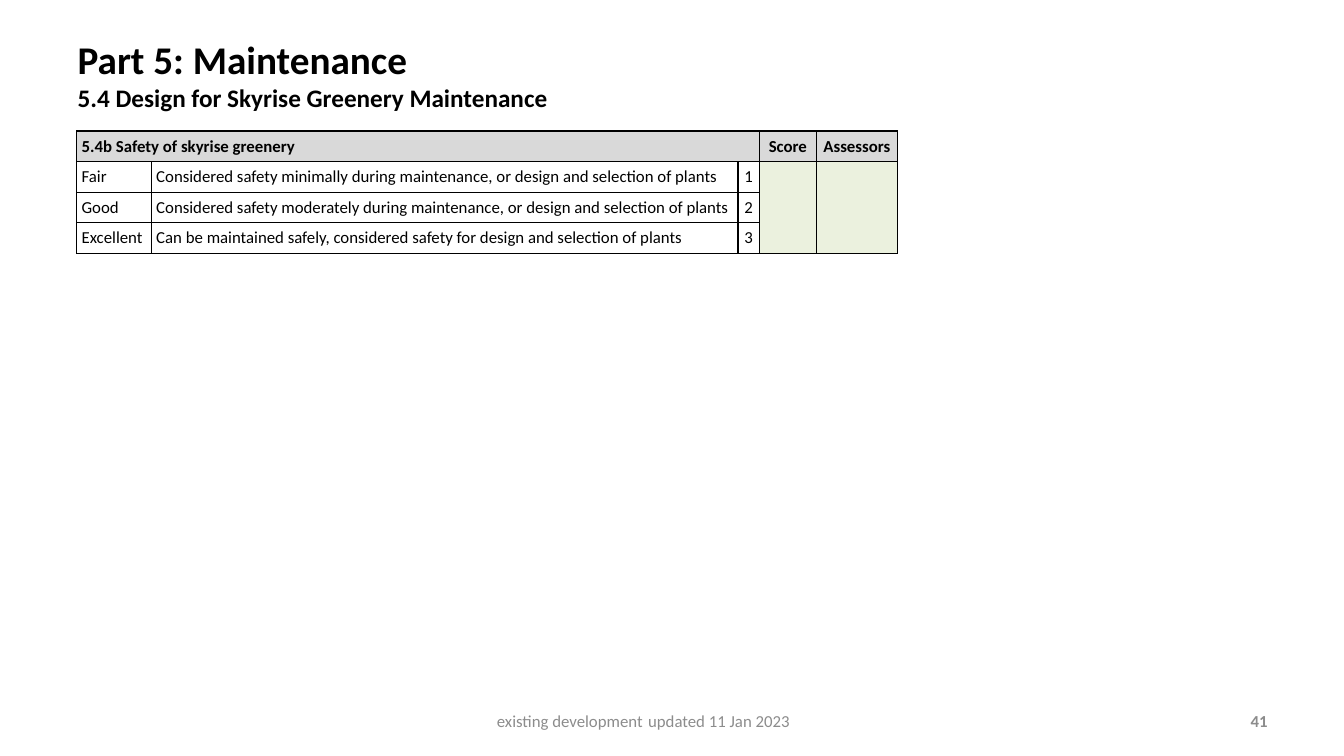
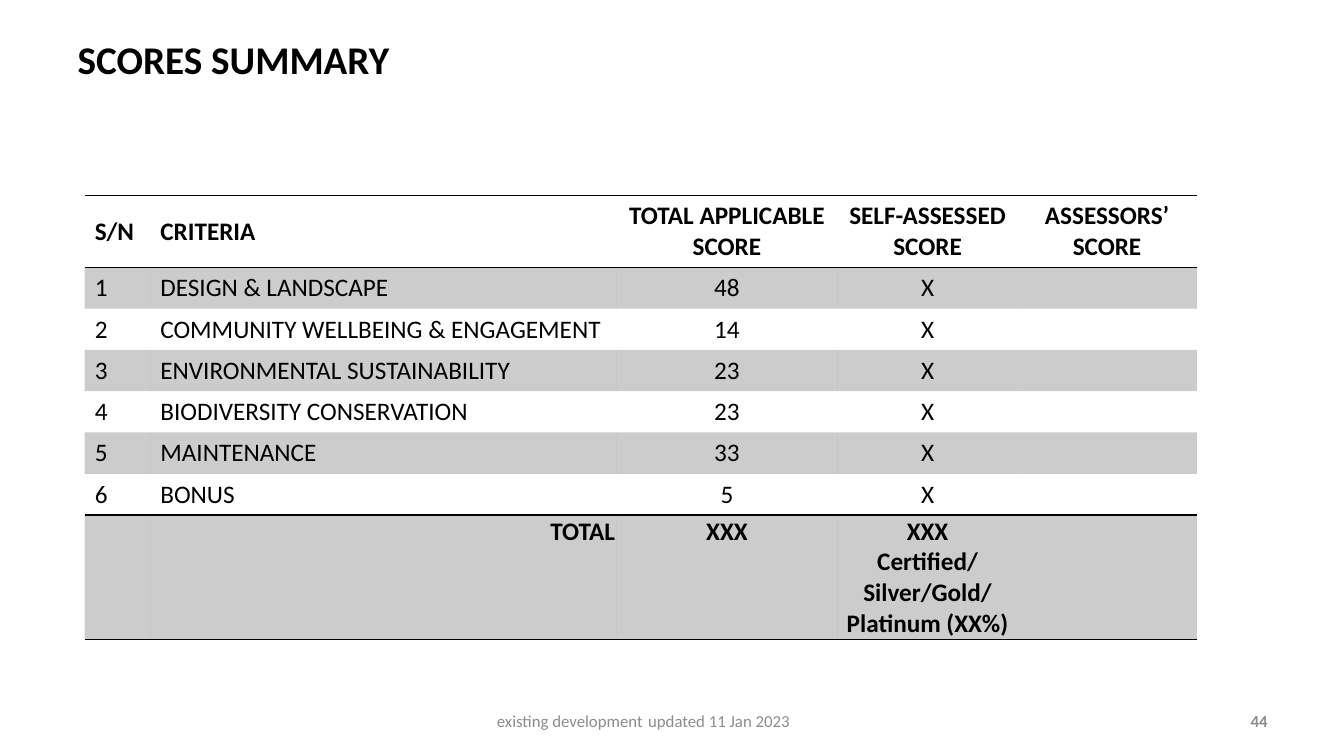
from dataclasses import dataclass
from typing import Any, NamedTuple

from lxml.etree import SubElement
from pptx import Presentation
from pptx.dml.color import RGBColor
from pptx.enum.text import MSO_ANCHOR as Anchor, MSO_AUTO_SIZE as AutoSize, PP_ALIGN as Align
from pptx.oxml.ns import qn
from pptx.util import Pt

EMU_PER_PX = 9144
TITLE_ONLY_LAYOUT = 5
NO_STYLE_NO_GRID = "{2D5ABB26-0587-4C30-8999-92F81FD0307C}"
ALL_SIDES = "LRTB"


@dataclass(frozen=True)
class Theme:
    font: str = "Calibri"
    ink: str = "000000"
    muted: str = "8C8C8C"
    header: str = "D9D9D9"
    entry: str = "EBF1DE"
    band_alpha: int = 20
    title_size: int = 28
    subtitle_size: int = 18
    summary_size: int = 18
    small_size: int = 12
    rule_width: int = 1


THEME = Theme()


class Box(NamedTuple):
    left: int
    top: int
    width: int
    height: int


class Insets(NamedTuple):
    left: int
    top: int
    right: int
    bottom: int


TITLE_BOX = Box(67, 30, 1036, 99)
FOOTER_BOX = Box(456, 695, 422, 40)
NUMBER_BOX = Box(956, 695, 311, 40)
FOOTER_INDENT = 27
FOOTER_TAB = 229


@dataclass(frozen=True)
class RowStyle:
    size: int
    bold: bool = False
    anchor: Any = Anchor.MIDDLE
    insets: Insets = Insets(10, 5, 10, 5)
    sides: str = ""
    fill: str | None = None
    alpha: int = 100


@dataclass(frozen=True)
class Row:
    height: int
    texts: tuple[str, ...]
    style: RowStyle
    aligns: tuple[Any, ...]


def px(length: int) -> int:
    return length * EMU_PER_PX


def set_all(target: Any, values: dict[str, Any]) -> None:
    for name, value in values.items():
        setattr(target, name, value)


def format_font(font: Any, size: int, bold: bool = False, color: str = THEME.ink) -> None:
    set_all(font, {"name": THEME.font, "size": Pt(size), "bold": bold})
    font.color.rgb = RGBColor.from_string(color)


def add_title(page: Any, title: str, subtitle: str = "") -> None:
    shape = page.shapes.title
    set_all(shape, {name: px(value) for name, value in TITLE_BOX._asdict().items()})
    frame = shape.text_frame
    set_all(frame, {"word_wrap": True, "auto_size": AutoSize.NONE,
                    "vertical_anchor": Anchor.TOP})
    para = frame.paragraphs[0]
    para.alignment = Align.LEFT
    for text, size in ((title, THEME.title_size), (subtitle, THEME.subtitle_size)):
        if not text:
            continue
        if para.runs:
            para.add_line_break()
        span = para.add_run()
        span.text = text
        format_font(span.font, size, bold=True)


def add_small_text(page: Any, box: Box, text: str, align: Any, bold: bool = False) -> Any:
    frame = page.shapes.add_textbox(*map(px, box)).text_frame
    set_all(frame, {"word_wrap": True, "vertical_anchor": Anchor.MIDDLE})
    para = frame.paragraphs[0]
    para.alignment = align
    span = para.add_run()
    span.text = text
    format_font(span.font, THEME.small_size, bold, THEME.muted)
    return para


def add_footer(page: Any, number: int) -> None:
    para = add_small_text(page, FOOTER_BOX, "existing development\tupdated 11 Jan 2023", Align.LEFT)
    properties = para._p.get_or_add_pPr()
    properties.set("marL", str(px(FOOTER_INDENT)))
    properties.set("indent", "0")
    tabs = SubElement(properties, qn("a:tabLst"))
    SubElement(tabs, qn("a:tab"), pos=str(px(FOOTER_TAB)), algn="l")
    add_small_text(page, NUMBER_BOX, str(number), Align.RIGHT, bold=True)


def draw_borders(cell: Any, sides: str) -> None:
    properties = cell._tc.get_or_add_tcPr()
    for side in ALL_SIDES:
        if side in sides:
            line = SubElement(properties, qn(f"a:ln{side}"), w=str(Pt(THEME.rule_width)))
            paint = SubElement(line, qn("a:solidFill"))
            SubElement(paint, qn("a:srgbClr"), val=THEME.ink)


def fill_cell(cell: Any, color: str | None, alpha: int = 100) -> None:
    if color is None:
        cell.fill.background()
        return
    cell.fill.solid()
    cell.fill.fore_color.rgb = RGBColor.from_string(color)
    if alpha < 100:
        tint = cell._tc.tcPr.find(f"{qn('a:solidFill')}/{qn('a:srgbClr')}")
        SubElement(tint, qn("a:alpha"), val=str(alpha * 1000))


def write_cell(cell: Any, text: str, style: RowStyle, align: Any) -> None:
    draw_borders(cell, style.sides)
    fill_cell(cell, style.fill, style.alpha)
    cell.vertical_anchor = style.anchor
    set_all(cell, {f"margin_{side}": px(value)
                   for side, value in style.insets._asdict().items()})
    if not text:
        return
    frame = cell.text_frame
    frame.text = text
    for para in frame.paragraphs:
        para.alignment = align
        for span in para.runs:
            format_font(span.font, style.size, style.bold)


def add_grid(page: Any, left: int, top: int, widths: tuple[int, ...], rows: list[Row]) -> Any:
    box = Box(left, top, sum(widths), sum(row.height for row in rows))
    frame = page.shapes.add_table(len(rows), len(widths), *map(px, box))
    table = frame.table
    set_all(table, {"first_row": False, "horz_banding": False})
    table._tbl.tblPr.find(qn("a:tableStyleId")).text = NO_STYLE_NO_GRID
    for column, width in zip(table.columns, widths):
        column.width = px(width)
    for line, row in zip(table.rows, rows):
        line.height = px(row.height)
        for cell, text, align in zip(line.cells, row.texts, row.aligns):
            write_cell(cell, text, row.style, align)
    return table


def build_maintenance(page: Any) -> None:
    add_title(page, "Part 5: Maintenance", "5.4 Design for Skyrise Greenery Maintenance")
    insets = Insets(5, 5, 5, 5)
    header = RowStyle(THEME.small_size, bold=True, insets=insets, sides=ALL_SIDES,
                      fill=THEME.header)
    body = RowStyle(THEME.small_size, insets=insets, sides=ALL_SIDES)
    aligns = (Align.LEFT, Align.LEFT, Align.CENTER, Align.CENTER, Align.CENTER)
    levels = (
        ("Fair", "Considered safety minimally during maintenance, or design and selection of plants"),
        ("Good", "Considered safety moderately during maintenance, or design and selection of plants"),
        ("Excellent", "Can be maintained safely, considered safety for design and selection of plants"),
    )
    rows = [Row(30, ("5.4b Safety of skyrise greenery", "", "", "Score", "Assessors"),
                header, aligns)]
    rows += [Row(30, (level, meaning, str(score), "", ""), body, aligns)
             for score, (level, meaning) in enumerate(levels, 1)]
    table = add_grid(page, 76, 130, (74, 582, 21, 57, 80), rows)
    table.cell(0, 0).merge(table.cell(0, 2))
    for column in (3, 4):
        entry = table.cell(1, column)
        entry.merge(table.cell(len(levels), column))
        fill_cell(entry, THEME.entry)


def build_summary(page: Any) -> None:
    add_title(page, "SCORES SUMMARY")
    size = THEME.summary_size
    band = {"fill": THEME.ink, "alpha": THEME.band_alpha}
    header = RowStyle(size, bold=True, sides="TB")
    total = RowStyle(size, bold=True, anchor=Anchor.TOP, insets=Insets(1, 1, 1, 0),
                     sides="TB", **band)
    aligns = (Align.LEFT, Align.LEFT, Align.CENTER, Align.CENTER, Align.CENTER)
    total_aligns = (Align.LEFT, Align.RIGHT, *aligns[2:])
    criteria = (
        ("DESIGN & LANDSCAPE", 48),
        ("COMMUNITY WELLBEING & ENGAGEMENT", 14),
        ("ENVIRONMENTAL SUSTAINABILITY", 23),
        ("BIODIVERSITY CONSERVATION", 23),
        ("MAINTENANCE", 33),
        ("BONUS", 5),
    )
    rows = [Row(41, ("S/N", "CRITERIA", "TOTAL APPLICABLE SCORE", "SELF-ASSESSED SCORE",
                     "ASSESSORS’ SCORE"), header, aligns)]
    for number, (name, score) in enumerate(criteria, 1):
        style = RowStyle(size, anchor=Anchor.BOTTOM,
                         sides="B" if number == len(criteria) else "",
                         **(band if number % 2 else {}))
        rows.append(Row(41, (str(number), name, str(score), "X", ""), style, aligns))
    rows.append(Row(41, ("", "TOTAL", "XXX", "XXX\nCertified/Silver/Gold/Platinum (XX%)", ""),
                    total, total_aligns))
    add_grid(page, 84, 194, (65, 462, 220, 178, 178), rows)


def main() -> None:
    deck = Presentation()
    set_all(deck, {"slide_width": px(1333), "slide_height": px(750)})
    for number, build in ((41, build_maintenance), (44, build_summary)):
        page = deck.slides.add_slide(deck.slide_layouts[TITLE_ONLY_LAYOUT])
        build(page)
        add_footer(page, number)
    deck.save("out.pptx")


if __name__ == "__main__":
    main()
